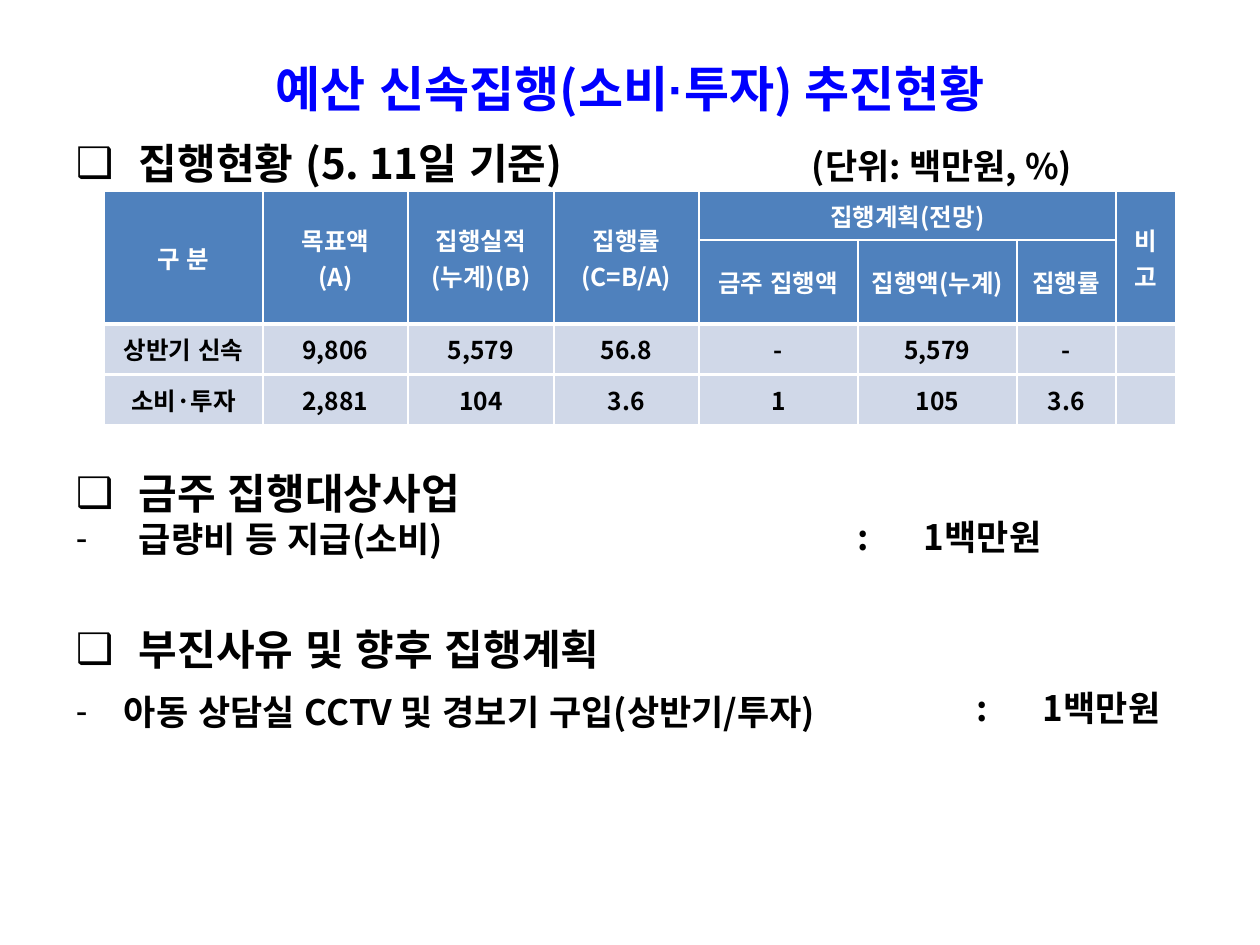
import pptx
import pptx.dml.color
import pptx.enum.lang
import pptx.enum.text
import pptx.oxml.ns
import pptx.util
from lxml import etree

EMU_PER_PX = 914400 // 126
BLUE = pptx.dml.color.RGBColor(0x00, 0x00, 0xFF)
BLACK = pptx.dml.color.RGBColor(0x00, 0x00, 0x00)
WHITE = pptx.dml.color.RGBColor(0xFF, 0xFF, 0xFF)
HEADER_FILL = pptx.dml.color.RGBColor(0x4F, 0x81, 0xBD)
BODY_FILL = pptx.dml.color.RGBColor(0xD0, 0xD8, 0xE8)
KOREAN = "Noto Sans CJK KR"
LATIN = "Arial"
CENTER = pptx.enum.text.PP_ALIGN.CENTER

COLUMN_WIDTHS = [159, 145, 146, 145, 159, 159, 99, 60]
ROW_HEIGHTS = [49, 84, 50, 49]
HEADER_ROWS = 2
TABLE_ROWS = [
    ["구 분", "목표액\n(A)", "집행실적(누계)(B)", "집행률\n(C=B/A)", "집행계획(전망)", "", "", "비 고"],
    ["", "", "", "", "금주 집행액", "집행액(누계)", "집행률", ""],
    ["상반기 신속", "9,806", "5,579", "56.8", "-", "5,579", "-", ""],
    ["소비·투자", "2,881", "104", "3.6", "1", "105", "3.6", ""],
]
MERGES = [(0, column, 1, column) for column in (0, 1, 2, 3, 7)] + [(0, 4, 0, 6)]


def px(length):
    return pptx.util.Emu(length * EMU_PER_PX)


def add_element(parent, tag, **attributes):
    return etree.SubElement(parent, pptx.oxml.ns.qn(tag), **attributes)


class SlideBuilder:
    def __init__(self, slide):
        self.slide = slide

    def add_run(self, paragraph, text, size, color=BLACK, font=KOREAN):
        run = paragraph.add_run()
        run.text = text
        run.font.language_id = pptx.enum.lang.MSO_LANGUAGE_ID.KOREAN
        run.font.size = pptx.util.Pt(size)
        run.font.bold = True
        run.font.color.rgb = color
        run.font.name = font
        add_element(run.font._element, "a:ea", typeface=font)

    def add_text_box(self, left, top, width, height, margins=(0, 0, 0, 0)):
        shape = self.slide.shapes.add_textbox(px(left), px(top), px(width), px(height))
        frame = shape.text_frame
        frame.word_wrap = True
        frame.margin_left, frame.margin_top, frame.margin_right, frame.margin_bottom = map(px, margins)
        return frame

    def add_bullet(self, frame, bullet, text, size, before=0, spacing=1.4, indent=(126, -63)):
        paragraph = frame.add_paragraph()
        properties = paragraph._p.get_or_add_pPr()
        properties.set("marL", str(px(indent[0])))
        properties.set("indent", str(px(indent[1])))
        color = add_element(properties, "a:buClr")
        add_element(color, "a:srgbClr", val=str(BLACK))
        add_element(properties, "a:buFont", typeface=LATIN)
        add_element(properties, "a:buChar", char=bullet)
        paragraph.line_spacing = spacing
        paragraph.space_before = pptx.util.Pt(before)
        self.add_run(paragraph, text, size)

    def add_note(self, left, top, text, width=300, tab=66):
        """Add a one-line text whose tab, if any, stands at a fixed distance."""
        paragraph = self.add_text_box(left, top, width, 51).paragraphs[0]
        tabs = add_element(paragraph._p.get_or_add_pPr(), "a:tabLst")
        add_element(tabs, "a:tab", pos=str(px(tab)), algn="l")
        self.add_run(paragraph, text, 20)

    def set_borders(self, cell, widths):
        """Draw white borders; widths are left, right, top, bottom in points."""
        properties = cell._tc.get_or_add_tcPr()
        for index, (side, width) in enumerate(zip("LRTB", widths)):
            line = add_element(properties, "a:ln" + side, w=str(pptx.util.Pt(width)))
            add_element(add_element(line, "a:solidFill"), "a:srgbClr", val=str(WHITE))
            properties.insert(index, line)

    def add_table(self, left, top):
        table = self.slide.shapes.add_table(
            len(ROW_HEIGHTS), len(COLUMN_WIDTHS), px(left), px(top),
            px(sum(COLUMN_WIDTHS)), px(sum(ROW_HEIGHTS))).table
        for column, width in zip(table.columns, COLUMN_WIDTHS):
            column.width = px(width)
        for row, height in zip(table.rows, ROW_HEIGHTS):
            row.height = px(height)
        for top_row, first, bottom_row, last in MERGES:
            table.cell(top_row, first).merge(table.cell(bottom_row, last))

        row_lines = [1, 1.5, 2.25, 1.5, 1]
        column_lines = [1] + [1.5] * (len(COLUMN_WIDTHS) - 2) + [1, 1]
        for row, texts in enumerate(TABLE_ROWS):
            for column, text in enumerate(texts):
                cell = table.cell(row, column)
                header = row < HEADER_ROWS
                cell.fill.solid()
                cell.fill.fore_color.rgb = HEADER_FILL if header else BODY_FILL
                cell.vertical_anchor = pptx.enum.text.MSO_ANCHOR.MIDDLE
                end_row = row + (cell.span_height if cell.is_merge_origin else 1)
                end_column = column + (cell.span_width if cell.is_merge_origin else 1)
                self.set_borders(cell, (column_lines[column], column_lines[end_column],
                                        row_lines[row], row_lines[end_row]))
                if text:
                    self.fill_cell(cell, text, WHITE if header else BLACK)

    def fill_cell(self, cell, text, color):
        for index, line in enumerate(text.split("\n")):
            frame = cell.text_frame
            paragraph = frame.add_paragraph() if index else frame.paragraphs[0]
            paragraph.alignment = CENTER
            self.add_run(paragraph, line, 14, color)


def main():
    presentation = pptx.Presentation()
    presentation.slide_width, presentation.slide_height = px(1260), px(945)
    builder = SlideBuilder(presentation.slides.add_slide(presentation.slide_layouts[6]))

    body = builder.add_text_box(0, 34, 1260, 895, margins=(13, 25, 13, 6))
    title = body.paragraphs[0]
    title.alignment = CENTER
    for text, font in (("예산 신속집행(소비", KOREAN), ("·", LATIN), ("투자) 추진현황", KOREAN)):
        builder.add_run(title, text, 28, BLUE, font)
    builder.add_bullet(body, "❑", "집행현황 (5. 11일 기준)", 24)
    builder.add_bullet(body, "❑", "금주 집행대상사업", 24, before=148)
    builder.add_bullet(body, "-", "급량비 등 지급(소비)", 20, spacing=1.0)
    builder.add_bullet(body, "❑", "부진사유 및 향후 집행계획", 24, before=25)
    builder.add_bullet(body, "-", "아동 상담실 CCTV 및 경보기 구입(상반기/투자)", 20, indent=(111, -48))

    builder.add_note(812, 145, "(단위: 백만원, %)", width=340)
    for left, top in ((858, 516), (977, 687)):
        builder.add_note(left, top, ":\t1백만원", width=270)
    builder.add_table(104, 191)
    presentation.save("out.pptx")


if __name__ == "__main__":
    main()
